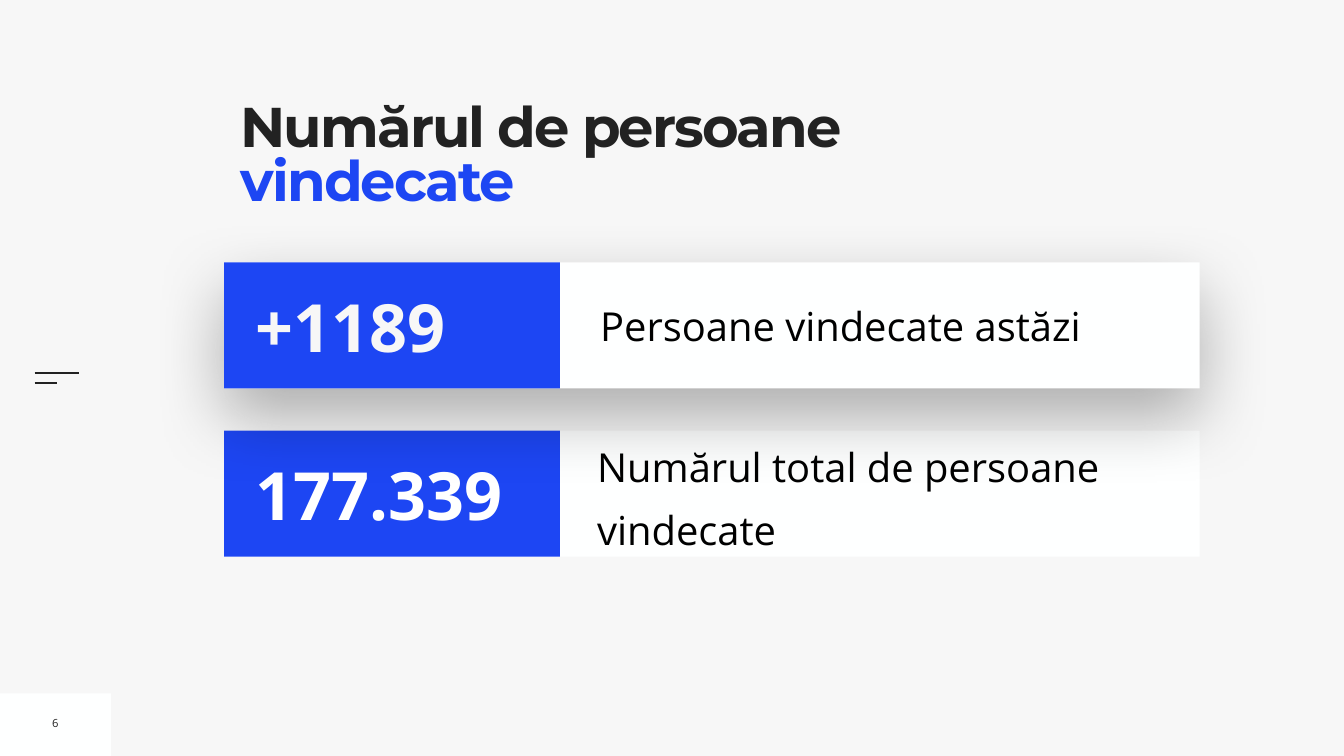
from lxml.etree import SubElement
from pptx import Presentation
from pptx.dml.color import RGBColor
from pptx.enum.shapes import MSO_CONNECTOR, MSO_SHAPE
from pptx.enum.text import MSO_ANCHOR, PP_ALIGN
from pptx.oxml.ns import qn
from pptx.util import Cm, Pt

COLORS = {"back": "F7F7F7", "white": "FEFFFF", "pure": "FFFFFF",
          "dark": "222222", "blue": "1D46F3", "black": "000000"}


class Deck:
    """Holds the style and the current slide."""
    head = "Montserrat"
    body = "Open Sans"

    def __init__(self, wide, high):
        self.prs = Presentation()
        self.prs.slide_width, self.prs.slide_height = Cm(wide), Cm(high)
        self.slide = self.prs.slides.add_slide(self.prs.slide_layouts[6])
        self.paint(self.slide.background.fill, "back")

    def paint(self, fill, color):
        fill.solid()
        fill.fore_color.rgb = RGBColor.from_string(COLORS[color])

    def rect(self, x, y, w, h, color):
        box = self.slide.shapes.add_shape(
            MSO_SHAPE.RECTANGLE, Cm(x), Cm(y), Cm(w), Cm(h))
        box.shadow.inherit = False
        box.line.fill.background()
        self.paint(box.fill, color)
        return box

    def shade(self, box, blur, dist, alpha):
        """Drop a soft black shadow straight down."""
        list_ = box._element.spPr.find(qn("a:effectLst"))
        outer = SubElement(list_, qn("a:outerShdw"), blurRad=str(Pt(blur)),
                           dist=str(Pt(dist)), dir="5400000", rotWithShape="0")
        tint = SubElement(outer, qn("a:srgbClr"), val=COLORS["black"])
        SubElement(tint, qn("a:alpha"), val=str(alpha * 1000))

    def line(self, x, y, w):
        rule = self.slide.shapes.add_connector(
            MSO_CONNECTOR.STRAIGHT, Cm(x), Cm(y), Cm(x + w), Cm(y))
        rule.line.width = Pt(3)
        rule.line.color.rgb = RGBColor.from_string(COLORS["dark"])
        SubElement(rule._element.spPr, qn("a:effectLst"))

    def text(self, x, y, w, h, runs, size, font=None, bold=False, pad=0.25,
             anchor=MSO_ANCHOR.MIDDLE, align=PP_ALIGN.LEFT, wrap=True,
             lead=None, before=None, track=None):
        box = self.slide.shapes.add_textbox(Cm(x), Cm(y), Cm(w), Cm(h))
        frame = box.text_frame
        frame.word_wrap, frame.vertical_anchor = wrap, anchor
        frame.margin_left = frame.margin_right = Cm(pad)
        frame.margin_top = frame.margin_bottom = Cm(pad)
        par = frame.paragraphs[0]
        par.alignment = align
        if lead:
            par.line_spacing = lead
        if before:
            par.space_before = Pt(before)
        for words, color in runs:
            run = par.add_run()
            run.text = words
            run.font.name = font or self.body
            run.font.size, run.font.bold = Pt(size), bold
            run.font.color.rgb = RGBColor.from_string(COLORS[color])
            if track:
                run._r.get_or_add_rPr().set("spc", str(round(track * 100)))
        return box

    def card(self, y, value, color, shadow=False):
        """A white bar whose blue left part carries a figure."""
        bar = self.rect(11.3, y, 49.17, 6.35, "white")
        if shadow:
            self.shade(bar, 100, 40, 30)
        self.rect(11.3, y, 16.92, 6.35, "blue")
        self.text(12.65, y + 0.9, 15.32, 4.57, [(value, color)], 95, bold=True)


def main():
    deck = Deck(67.74, 38.1)

    # Page corner and side mark
    deck.rect(0, 34.95, 5.59, 3.15, "white")
    deck.line(1.75, 18.82, 2.24)
    deck.line(1.75, 19.28, 1.12)
    deck.text(2.36, 35.79, 0.86, 1.3, [("6", "dark")], 16,
              align=PP_ALIGN.CENTER, wrap=False)

    # Title
    title = deck.text(12.12, 5.26, 33.05, 6.93,
                      [("Numărul de persoane ", "dark"), ("vindecate", "blue")],
                      80, deck.head, True, pad=0, anchor=MSO_ANCHOR.TOP,
                      lead=0.8, track=-2.7)
    deck.paint(title.fill, "back")

    # Total, below the shadow of today's card
    deck.card(21.7, "177.339", "pure")
    deck.text(30.1, 21.74, 30.35, 5.99,
              [("Numărul total de persoane vindecate", "black")], 57,
              pad=0, lead=1.3, before=20)

    # Today
    deck.card(13.23, "+1189", "back", shadow=True)
    deck.text(30, 14.91, 29.87, 2.95,
              [("Persoane vindecate astăzi", "black")], 57)

    deck.prs.save("out.pptx")


if __name__ == "__main__":
    main()
